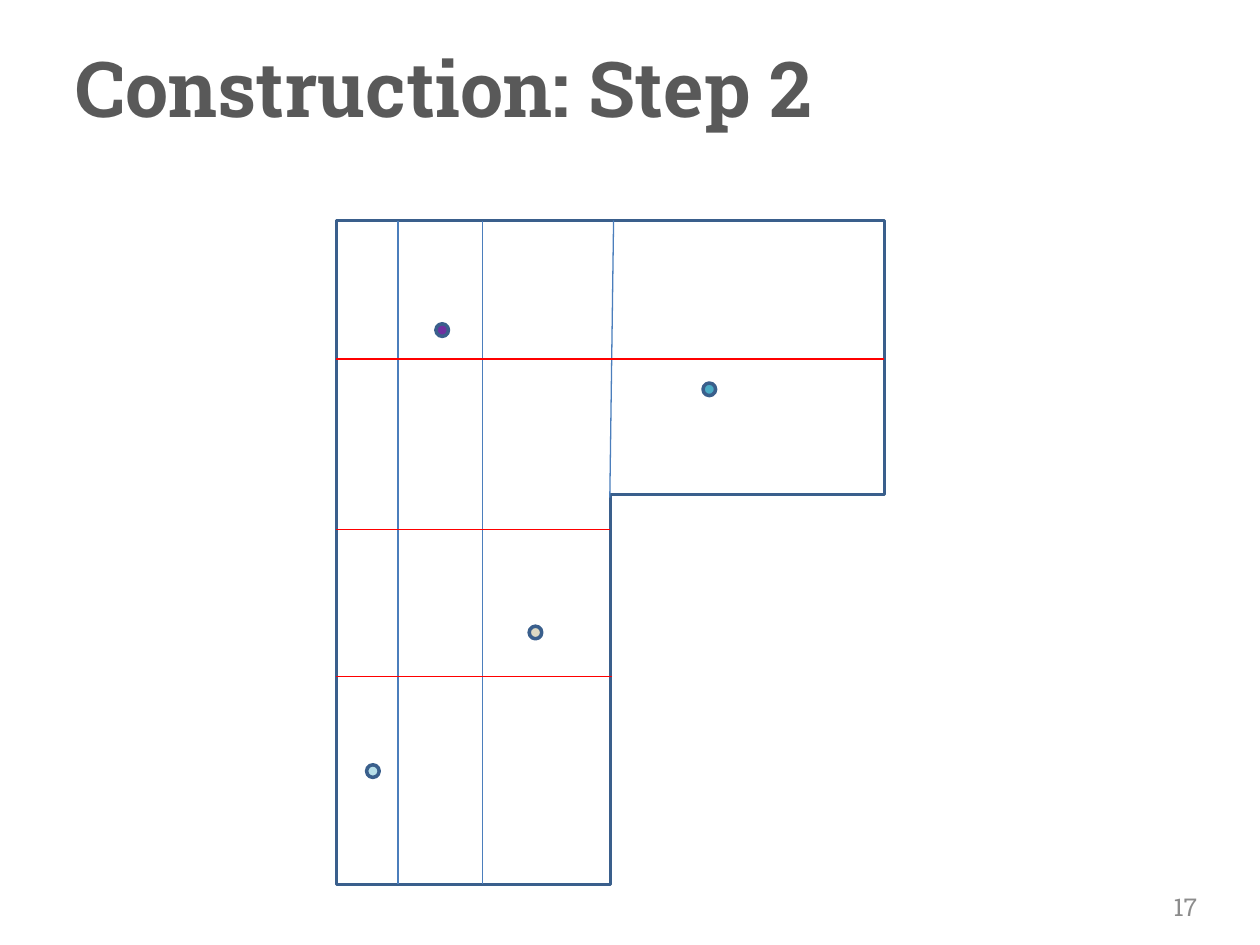
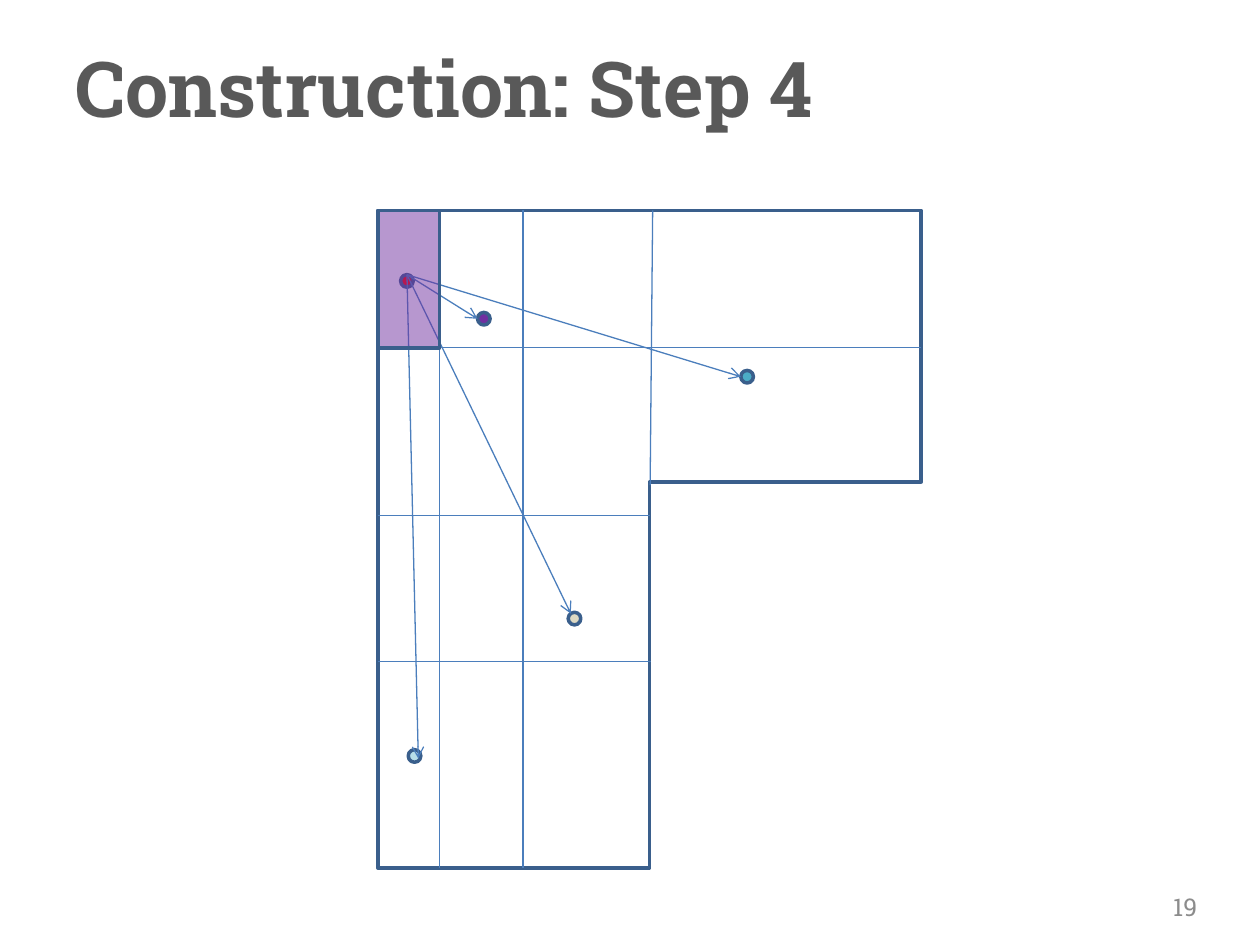
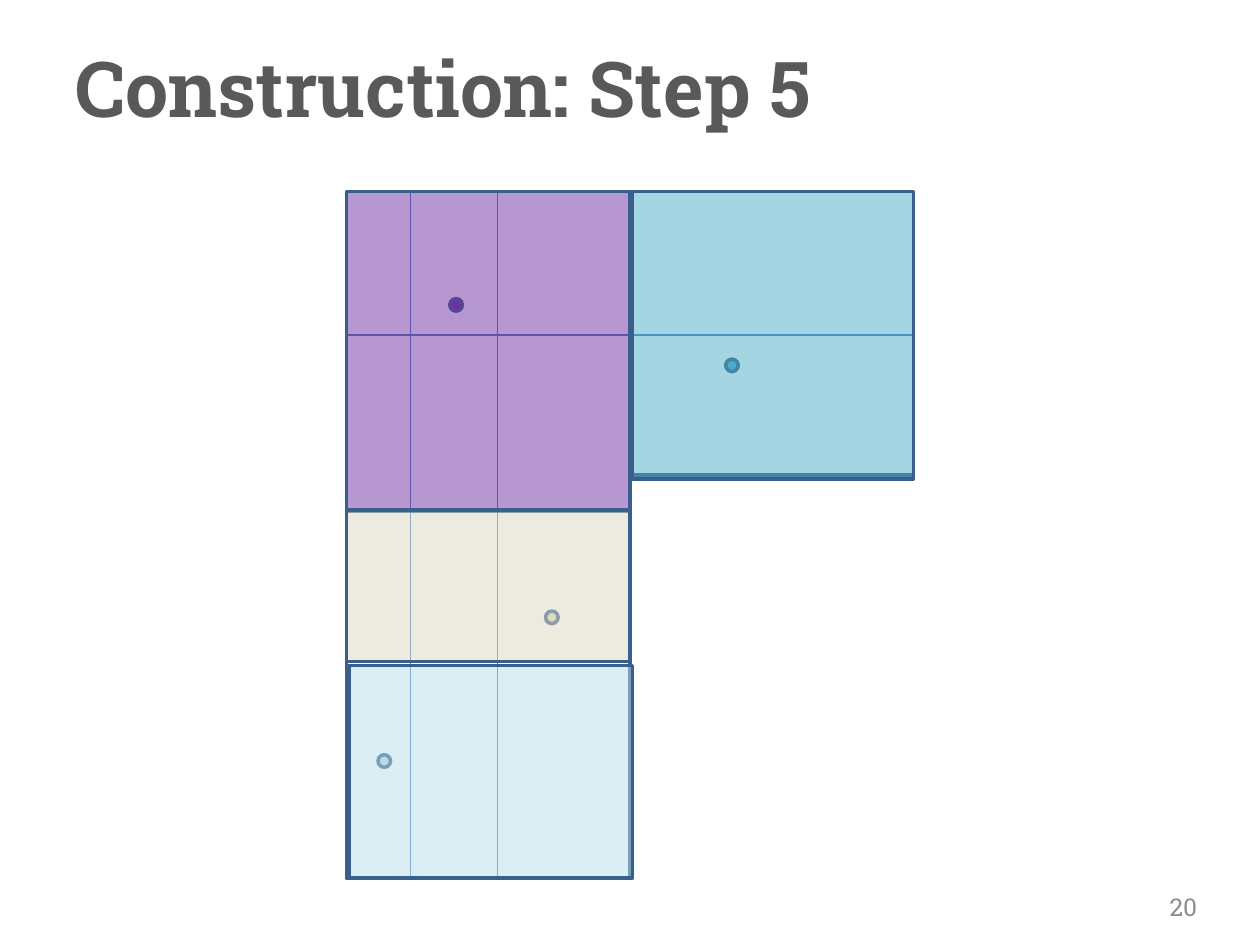
from dataclasses import dataclass

import pptx
import pptx.dml.color
import pptx.enum.shapes
import pptx.enum.text
import pptx.oxml
import pptx.oxml.ns
import pptx.util

EMU_PER_PX = 9144  # 100 px to the inch
SLIDE_WIDTH, SLIDE_HEIGHT = 1000, 750
SHAPES = pptx.enum.shapes.MSO_SHAPE
ALIGN = pptx.enum.text.PP_ALIGN


@dataclass(frozen=True)
class Theme:
    font: str = "Roboto Slab"
    title_size: int = 44
    number_size: int = 14
    title: str = "595959"
    number: str = "8C8C8C"
    paper: str = "FFFFFF"
    outline: str = "3A5F8C"
    grid: str = "4B7EBC"
    highlight: str = "FF0000"
    purple: str = "7030A0"
    teal: str = "4BACC6"
    sand: str = "DDD9C3"
    ice: str = "B7DEE8"
    outline_width: float = 2
    grid_width: float = 0.75
    region_opacity: int = 50


THEME = Theme()

# The floor plan is described on a grid 450 units wide and scaled per slide.
PLAN_WIDTH, PLAN_HEIGHT = 450, 545
COLUMNS = (51, 120)
CORNER_X, CORNER_Y = 225, 228
ROWS = ((114, PLAN_WIDTH), (253, CORNER_X), (374, 227))  # height, right end
DOT_SIZE = 10
SITES = (
    (30, 452, THEME.ice),
    (87, 90, THEME.purple),
    (306, 138, THEME.teal),
    (163, 338, THEME.sand),
)
START_DOT = (23.5, 58)
ARROW_START = (24, 53)
ARROW_ENDS = ((33, 454), (160, 334), (82, 90), (301, 138))
REGIONS = (
    (0, 0, 225, 254, THEME.purple),
    (227, 0, 223, 228, THEME.teal),
    (0, 253, 225, 120, THEME.sand),
    (2, 376, 225, 169, THEME.ice),
)


def px(*lengths):
    return [pptx.util.Emu(round(length) * EMU_PER_PX) for length in lengths]


def rgb(color):
    return pptx.dml.color.RGBColor.from_string(color)


def append_xml(parent, tag, **attributes):
    child = pptx.oxml.parse_xml(f"<a:{tag} {pptx.oxml.ns.nsdecls('a')}/>")
    for name, value in attributes.items():
        child.set(name, value)
    parent.append(child)


class Deck:
    def __init__(self, theme):
        self.theme = theme
        self.presentation = pptx.Presentation()
        self.presentation.slide_width, self.presentation.slide_height = px(
            SLIDE_WIDTH, SLIDE_HEIGHT)
        self.slide = None

    def start_slide(self, title, number):
        theme = self.theme
        self.slide = self.presentation.slides.add_slide(
            self.presentation.slide_layouts[6])
        self.text((50, 30, 900, 78), title, theme.title_size, theme.title, bold=True)
        self.text((727, 700, 233, 40), number, theme.number_size, theme.number,
                  align=ALIGN.RIGHT)

    def text(self, box, words, size, color, bold=False, align=ALIGN.LEFT):
        frame = self.slide.shapes.add_textbox(*px(*box)).text_frame
        frame.word_wrap = True
        frame.vertical_anchor = pptx.enum.text.MSO_ANCHOR.MIDDLE
        frame.text = words
        paragraph = frame.paragraphs[0]
        paragraph.alignment = align
        font = paragraph.runs[0].font
        font.name, font.size, font.bold = self.theme.font, pptx.util.Pt(size), bold
        font.color.rgb = rgb(color)

    def shape(self, kind, box, fill, opacity=100):
        shape = self.slide.shapes.add_shape(kind, *px(*box))
        shape.shadow.inherit = False
        shape.fill.solid()
        shape.fill.fore_color.rgb = rgb(fill)
        if opacity < 100:
            color = shape._element.spPr.find(".//" + pptx.oxml.ns.qn("a:srgbClr"))
            append_xml(color, "alpha", val=str(opacity * 1000))
        shape.line.color.rgb = rgb(self.theme.outline)
        shape.line.width = pptx.util.Pt(self.theme.outline_width)
        return shape

    def line(self, start, end, color, arrow=False):
        connector = self.slide.shapes.add_connector(
            pptx.enum.shapes.MSO_CONNECTOR.STRAIGHT, *px(*start, *end))
        connector.line.color.rgb = rgb(color)
        connector.line.width = pptx.util.Pt(self.theme.grid_width)
        if arrow:
            append_xml(connector.get_or_add_ln(), "tailEnd", type="arrow")
        append_xml(connector._element.spPr, "effectLst")


class FloorPlan:
    """L-shaped plan, placed by its top left corner and its width in px."""

    def __init__(self, deck, left, top, width):
        self.deck, self.left, self.top = deck, left, top
        self.scale = width / PLAN_WIDTH

    def point(self, x, y):
        return self.left + x * self.scale, self.top + y * self.scale

    def box(self, x, y, width, height):
        return *self.point(x, y), width * self.scale, height * self.scale

    def line(self, start, end, color=THEME.grid, arrow=False):
        self.deck.line(self.point(*start), self.point(*end), color, arrow)

    def dot(self, x, y, color):
        half = DOT_SIZE / 2
        self.deck.shape(SHAPES.OVAL, self.box(x - half, y - half, DOT_SIZE, DOT_SIZE),
                        color)

    def region(self, x, y, width, height, color):
        self.deck.shape(SHAPES.RECTANGLE, self.box(x, y, width, height), color,
                        self.deck.theme.region_opacity)

    def draw(self, row_color=THEME.grid, tilt=0):
        """Draw outline, sites and grid; tilt moves the top of the inner wall."""
        outline = self.deck.shape(
            SHAPES.CORNER, self.box(0, 0, PLAN_WIDTH, PLAN_HEIGHT), THEME.paper)
        outline._element.spPr.find(pptx.oxml.ns.qn("a:xfrm")).set("flipV", "1")
        for site in SITES:
            self.dot(*site)
        for x in COLUMNS:
            self.line((x, 0), (x, PLAN_HEIGHT))
        self.line((CORNER_X + tilt, 0), (CORNER_X, CORNER_Y))
        for y, right in ROWS:
            self.line((0, y), (right, y), row_color)


def add_row_step(deck):
    deck.start_slide("Construction: Step 2", "17")
    FloorPlan(deck, 267, 175, 435).draw(row_color=THEME.highlight, tilt=3)


def add_distance_step(deck):
    deck.start_slide("Construction: Step 4", "19")
    plan = FloorPlan(deck, 300, 167, 431)
    plan.draw(tilt=3)
    plan.dot(*START_DOT, THEME.highlight)
    for end in ARROW_ENDS:
        plan.line(ARROW_START, end, arrow=True)
    plan.region(0, 0, COLUMNS[0], ROWS[0][0], THEME.purple)


def add_region_step(deck):
    deck.start_slide("Construction: Step 5", "20")
    plan = FloorPlan(deck, 275, 152, 450)
    plan.draw()
    for region in REGIONS:
        plan.region(*region)


def main():
    deck = Deck(THEME)
    add_row_step(deck)
    add_distance_step(deck)
    add_region_step(deck)
    deck.presentation.save("out.pptx")


if __name__ == "__main__":
    main()
